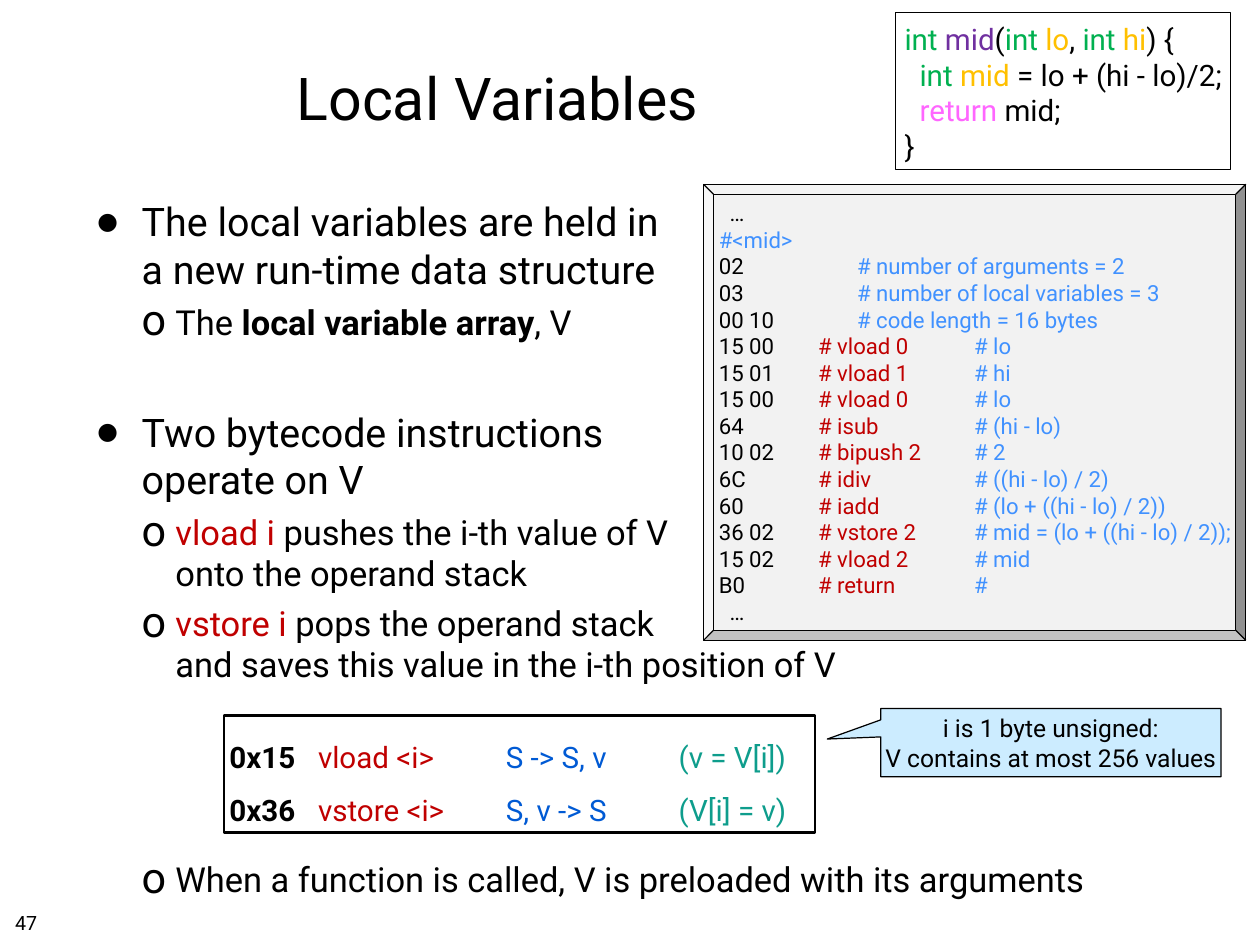
from lxml.etree import SubElement
from pptx import Presentation
from pptx.dml.color import RGBColor
from pptx.enum.shapes import MSO_SHAPE as Geometry
from pptx.enum.text import MSO_ANCHOR as Anchor, MSO_AUTO_SIZE as AutoSize, PP_ALIGN as Align
from pptx.oxml.ns import qn
from pptx.util import Inches, Pt

FONT = "Roboto"
BLACK, RED, SKY, BLUE, TEAL = "000000", "C00000", "4091FF", "005AD4", "0E9D8C"
GREEN, PURPLE, GOLD, PINK = "00B050", "7030A0", "FFC000", "FF66FF"

# A run is (text, colour) or (text, colour, bold).
TITLE = [("Local Variables", BLACK)]
PAGE_NUMBER = [("47", BLACK)]

# (bullet level, space before in points, runs)
BULLETS = [
    (0, 8, [("The local variables are held in\na new run-time data structure", BLACK)]),
    (1, 7, [("The ", BLACK), ("local variable array", BLACK, True), (", V", BLACK)]),
    (0, 53.5, [("Two bytecode instructions\noperate on V", BLACK)]),
    (1, 7, [("vload i ", RED), ("pushes the i-th value of V\nonto the operand stack", BLACK)]),
    (1, 7, [("vstore i ", RED),
            ("pops the operand stack\nand saves this value in the i-th position of V", BLACK)]),
    (1, 140.5, [("When a function is called, V is preloaded with its arguments", BLACK)]),
]
LEVELS = [  # one entry per bullet level
    {"char": "●", "percent": 60, "size": 32, "left": 0.5, "hang": 0.5},
    {"char": "o", "percent": 125, "size": 28, "left": 0.88, "hang": 0.38},
]

BYTECODE_HEADER = [
    ("02", "# number of arguments = 2"),
    ("03", "# number of local variables = 3"),
    ("00 10", "# code length = 16 bytes"),
]
BYTECODE = [
    ("15 00", "# vload 0", "# lo"),
    ("15 01", "# vload 1", "# hi"),
    ("15 00", "# vload 0", "# lo"),
    ("64", "# isub", "# (hi - lo)"),
    ("10 02", "# bipush 2", "# 2"),
    ("6C", "# idiv", "# ((hi - lo) / 2)"),
    ("60", "# iadd", "# (lo + ((hi - lo) / 2))"),
    ("36 02", "# vstore 2", "# mid = (lo + ((hi - lo) / 2));"),
    ("15 02", "# vload 2", "# mid"),
    ("B0", "# return", "#"),
]
HEADER_TABS = [1.56, 2.88]
BYTECODE_TABS = [1.12, 1.56, 2.88]

# (indent in inches, runs)
SOURCE_CODE = [
    (0, [("int ", GREEN), ("mid", PURPLE), ("(", BLACK), ("int ", GREEN), ("lo", GOLD),
         (", ", BLACK), ("int ", GREEN), ("hi", GOLD), (") {", BLACK)]),
    (0.17, [("int ", GREEN), ("mid", GOLD), (" = lo + (hi - lo)/2;", BLACK)]),
    (0.17, [("return ", PINK), ("mid;", BLACK)]),
    (0, [("}", BLACK)]),
]

INSTRUCTIONS = [
    ("0x15", "vload <i>", "S -> S, v", "(v = V[i])"),
    ("0x36", "vstore <i>", "S, v -> S", "(V[i] = v)"),
]
INSTRUCTION_TABS = [1, 3.12, 5.07, 7.88]

CALLOUT = [("i is 1 byte unsigned:\nV contains at most 256 values", BLACK)]


def rgb(color):
    return RGBColor.from_string(color)


def set_all(target, values):
    for key, value in values.items():
        setattr(target, key, value)


def columns(cells, colors):
    """Join cells with tabs into one run per column."""
    last = len(cells) - 1
    return [(cell if i == last else cell + "\t", color)
            for i, (cell, color) in enumerate(zip(cells, colors))]


def add_runs(paragraph, runs, size):
    for text, color, *bold in runs:
        for i, line in enumerate(text.split("\n")):
            if i:
                paragraph.add_line_break()
            if line:
                run = paragraph.add_run()
                run.text = line
                set_all(run.font, {"name": FONT, "size": Pt(size), "bold": bool(bold)})
                run.font.color.rgb = rgb(color)


def add_bullet(paragraph, level):
    props = paragraph._p.get_or_add_pPr()
    props.set("marL", str(Inches(level["left"])))
    props.set("indent", str(-Inches(level["hang"])))
    SubElement(SubElement(props, qn("a:buClr")), qn("a:srgbClr"), val=BLACK)
    SubElement(props, qn("a:buSzPct"), val=str(level["percent"] * 1000))
    SubElement(props, qn("a:buFont"), typeface=FONT)
    SubElement(props, qn("a:buChar"), char=level["char"])


def write(shape, lines, size, margins=(0.06,) * 4, **frame_format):
    """Fill a shape with (runs, options) lines."""
    frame = shape.text_frame
    sides = ("margin_left", "margin_top", "margin_right", "margin_bottom")
    set_all(frame, dict(zip(sides, map(Inches, margins))))
    set_all(frame, {"word_wrap": True, "vertical_anchor": Anchor.MIDDLE} | frame_format)
    for i, (runs, options) in enumerate(lines):
        paragraph = frame.paragraphs[0] if i == 0 else frame.add_paragraph()
        set_all(paragraph, {"alignment": Align.LEFT} | options.get("format", {}))
        level = options.get("level")
        if level:
            add_bullet(paragraph, level)
        props = paragraph._p.get_or_add_pPr()
        if "indent" in options:
            props.set("marL", str(Inches(options["indent"])))
        if "tabs" in options:
            stops = SubElement(props, qn("a:tabLst"))
            for stop in options["tabs"]:
                SubElement(stops, qn("a:tab"), pos=str(Inches(stop)), algn="l")
        add_runs(paragraph, runs, level["size"] if level else size)


def add_panel(geometry, box, fill=None, line_width=1, adjustments=()):
    panel = slide.shapes.add_shape(geometry, *map(Inches, box))
    panel.shadow.inherit = False
    for i, value in enumerate(adjustments):
        panel.adjustments[i] = value
    if fill:
        panel.fill.solid()
        panel.fill.fore_color.rgb = rgb(fill)
    else:
        panel.fill.background()
    panel.line.color.rgb = rgb(BLACK)
    panel.line.width = Pt(line_width)
    return panel


def add_text(*box):
    return slide.shapes.add_textbox(*map(Inches, box))


deck = Presentation()
set_all(deck, {"slide_width": Inches(14.22), "slide_height": Inches(10.67)})
slide = deck.slides.add_slide(deck.slide_layouts[6])
centred = {"format": {"alignment": Align.CENTER}}
hugging = {"word_wrap": False, "auto_size": AutoSize.SHAPE_TO_FIT_TEXT}

write(add_text(1.04, 0.28, 9.15, 1.64), [(TITLE, centred)], 48)

bullet_lines = [(runs, {"level": LEVELS[level], "format": {"space_before": Pt(before)}})
                for level, before, runs in BULLETS]
write(add_text(1.04, 2.17, 12.14, 7.54), bullet_lines, 32, vertical_anchor=Anchor.TOP)

ellipsis = ([("…", BLACK)], {"indent": 0.12})
listing = [
    ellipsis,
    ([("#<mid>", SKY)], {}),
    *[(columns(row, (BLACK, SKY)), {"tabs": HEADER_TABS}) for row in BYTECODE_HEADER],
    *[(columns(row, (BLACK, RED, SKY)), {"tabs": BYTECODE_TABS}) for row in BYTECODE],
    ellipsis,
]
bytecode_panel = add_panel(Geometry.BEVEL, (7.94, 2.08, 6.12, 5.15), "F2F2F2",
                           adjustments=[0.022])
# The narrow right margin keeps the longest comment on one line.
write(bytecode_panel, listing, 18, (0.06, 0.06, 0, 0.06), **hugging)

source_panel = add_panel(Geometry.RECTANGLE, (10.11, 0.14, 3.78, 1.77))
source_lines = [(runs, {"indent": indent}) for indent, runs in SOURCE_CODE]
write(source_panel, source_lines, 24, (0.1, 0.1, 0.06, 0.06),
      vertical_anchor=Anchor.TOP, **hugging)

instruction_runs = []
for opcode, *rest in INSTRUCTIONS:
    line_start = "\n" if instruction_runs else ""
    instruction_runs += [(f"{line_start}{opcode}\t", BLACK, True),
                         *columns(rest, (RED, BLUE, TEAL))]
instruction_panel = add_panel(Geometry.RECTANGLE, (2.53, 8.08, 6.67, 1.32), line_width=2)
write(instruction_panel,
      [(instruction_runs, {"tabs": INSTRUCTION_TABS, "format": {"line_spacing": 1.5}})],
      24, auto_size=AutoSize.SHAPE_TO_FIT_TEXT)

callout = add_panel(Geometry.RECTANGULAR_CALLOUT, (9.94, 8, 3.84, 0.77), "CCECFF",
                    adjustments=[-0.657, -0.052])
write(callout, [(CALLOUT, centred)], 20, (0.05,) * 4, **hugging)

write(add_text(0.11, 10.23, 0.37, 0.35), [(PAGE_NUMBER, {})], 16,
      vertical_anchor=Anchor.TOP, word_wrap=False)

deck.save("out.pptx")
